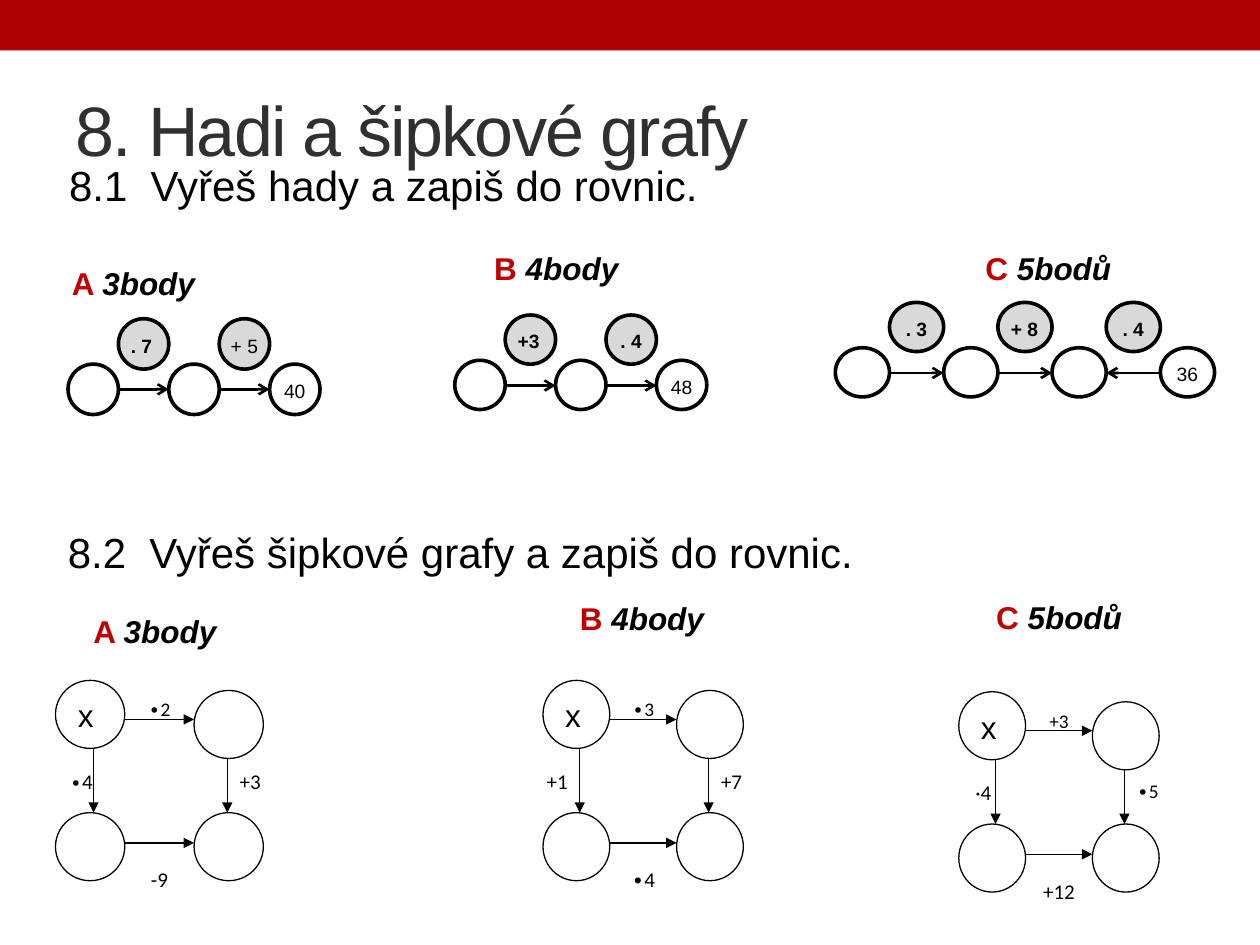
from dataclasses import dataclass

from lxml import etree
from pptx import Presentation
from pptx.dml.color import RGBColor
from pptx.enum.shapes import MSO_CONNECTOR, MSO_SHAPE
from pptx.enum.text import MSO_ANCHOR, PP_ALIGN
from pptx.oxml.ns import qn
from pptx.util import Inches, Pt

LEFT, CENTER = PP_ALIGN.LEFT, PP_ALIGN.CENTER
TOP, MIDDLE = MSO_ANCHOR.TOP, MSO_ANCHOR.MIDDLE
RECTANGLE, ELLIPSE, NODE = MSO_SHAPE.RECTANGLE, MSO_SHAPE.OVAL, MSO_SHAPE.FLOWCHART_CONNECTOR
STRAIGHT = MSO_CONNECTOR.STRAIGHT


@dataclass(frozen=True)
class Theme:
    """Colours, fonts, type sizes and line widths of the slide."""
    bar: str = "AD0101"
    title: str = "303030"
    accent: str = "C00000"
    ink: str = "000000"
    paper: str = "FFFFFF"
    operation: str = "D9D9D9"
    font: str = "Arial"
    label_font: str = "Calibri"
    title_size: int = 40
    task_size: int = 24
    heading_size: int = 18
    label_size: int = 12
    small_size: int = 11
    ring: float = 2.08
    snake_arrow: float = 1.5
    thin: float = 0.75


THEME = Theme()
SPACED = {"line_spacing": 1.15, "space_after": Pt(10)}


def apply_format(target, values):
    """Set each attribute of target from a dict of format values."""
    for name, value in values.items():
        setattr(target, name, value)


def write(shape, runs, size, align=LEFT, anchor=TOP, font=THEME.font, paragraph_format=None, margins=None):
    """Fill a shape with one paragraph of (text, format) runs."""
    frame = shape.text_frame
    apply_format(frame, {"word_wrap": True, "vertical_anchor": anchor, **(margins or {})})
    paragraph = frame.paragraphs[0]
    apply_format(paragraph, {"alignment": align, **(paragraph_format or {})})
    for text, values in runs:
        run = paragraph.add_run()
        run.text = text
        values = dict(values)
        run.font.color.rgb = RGBColor.from_string(values.pop("color", THEME.ink))
        apply_format(run.font, {"name": font, "size": Pt(size), **values})
    return paragraph


def add_figure(shapes, kind, box, fill=None, line=None):
    """Add a preset shape with a flat fill and an optional black outline."""
    shape = shapes.add_shape(kind, *map(Inches, box))
    shape.shadow.inherit = False
    if fill:
        shape.fill.solid()
        shape.fill.fore_color.rgb = RGBColor.from_string(fill)
    else:
        shape.fill.background()
    if line:
        shape.line.color.rgb = RGBColor.from_string(THEME.ink)
        shape.line.width = Pt(line)
    else:
        shape.line.fill.background()
    return shape


def add_arrow(shapes, start, end, width, head):
    """Add a straight black arrow between two points."""
    arrow = shapes.add_connector(STRAIGHT, *map(Inches, (*start, *end)))
    arrow.line.color.rgb = RGBColor.from_string(THEME.ink)
    arrow.line.width = Pt(width)
    etree.SubElement(arrow.line._ln, qn("a:tailEnd"), type=head)
    etree.SubElement(arrow._element.spPr, qn("a:effectLst"))


def add_title(slide, text):
    """Place and format the title."""
    title = slide.shapes.title
    apply_format(title, dict(zip(("left", "top", "width", "height"), map(Inches, (0.5, 0.58, 9, 0.88)))))
    paragraph = write(title, [(text, {"color": THEME.title})], THEME.title_size, anchor=MIDDLE)
    paragraph.runs[0].font._element.set("spc", "-100")


def add_task(slide, left, top, text):
    """Add the line that states a task."""
    box = slide.shapes.add_textbox(*map(Inches, (left, top, 9, 0.64)))
    write(box, [(text, {})], THEME.task_size, paragraph_format={"space_before": Pt(0.2 * THEME.task_size)})


def add_heading(slide, left, top, width, letter, points):
    """Add an exercise letter with its points."""
    box = slide.shapes.add_textbox(*map(Inches, (left, top, width, 0.55)))
    runs = [(letter + " ", {"bold": True, "color": THEME.accent}), (points, {"bold": True, "italic": True})]
    write(box, runs, THEME.heading_size, CENTER, MIDDLE)


def add_snake(slide, left, top, column, height, operations, result, backward=()):
    """Add a chain of circles with operations above the gaps."""
    shapes = slide.shapes.add_group_shape().shapes
    last = len(operations)

    def add_circle(place, y, fill=None, text=None, bold=False, align=CENTER):
        """Add a circle in a column of the snake."""
        circle = add_figure(shapes, ELLIPSE, (left + place * column, y, column, height), fill, THEME.ring)
        if text:
            side = Inches(0.04 if align == LEFT else 0)
            margins = {"margin_left": side, "margin_right": side,
                       "margin_top": Inches(0.04), "margin_bottom": Inches(0.04)}
            write(circle, [(text, {"bold": bold})], THEME.small_size, align, MIDDLE,
                  paragraph_format=SPACED, margins=margins)

    for index in range(last + 1):
        add_circle(2 * index, top, text=result if index == last else None)
    for index, (text, bold, align) in enumerate(operations):
        add_circle(2 * index + 1, top - 0.36, THEME.operation, text, bold, align)
        ends = [(left + place * column, top + 0.2) for place in (2 * index + 1, 2 * index + 2)]
        if index in backward:
            ends.reverse()
        add_arrow(shapes, *ends, THEME.snake_arrow, "arrow")


def add_graph(slide, left, top, column, labels, left_align=CENTER):
    """Add a square of four circles joined by labelled arrows."""
    shapes = slide.shapes.add_group_shape().shapes
    height, lower = 0.54, top + 1.05
    second, third = left + column, left + 2 * column
    down_left, down_right = left + 0.55 * column, left + 2.48 * column
    places = ((second, top + 0.06, CENTER), (left - 0.07, top + 0.62, left_align),
              (second, top + 1.4, CENTER), (down_right, top + 0.62, LEFT))
    for index, ((x, y, align), runs) in enumerate(zip(places, labels)):
        box = (x, y, column, 0.32)
        if index == 0:
            label = add_figure(shapes, RECTANGLE, box, THEME.paper)
        else:
            label = shapes.add_textbox(*map(Inches, box))
        sized = [(text, {"size": Pt(size)}) for text, size in runs]
        write(label, sized, THEME.label_size, align, font=THEME.label_font, paragraph_format=SPACED)
    nodes = [add_figure(shapes, NODE, (x, y, column, height), THEME.paper, THEME.thin)
             for x, y in ((left, top), (third, top + 0.08), (third, lower), (left, lower))]
    write(nodes[0], [("x", {})], THEME.heading_size)
    for start, end in (((second, top + 0.31), (third, top + 0.31)),
                       ((second, top + 1.29), (third, top + 1.29)),
                       ((down_left, top + height), (down_left, lower)),
                       ((down_right, top + 0.62), (down_right, lower))):
        add_arrow(shapes, start, end, THEME.thin, "triangle")


def main():
    """Build the slide and save it."""
    presentation = Presentation()
    presentation.slide_width, presentation.slide_height = Inches(10), Inches(7.5)
    slide = presentation.slides.add_slide(presentation.slide_layouts[5])
    add_figure(slide.shapes, RECTANGLE, (0, 0, 10, 0.4), THEME.bar)
    add_title(slide, "8. Hadi a šipkové grafy")
    add_task(slide, 0.45, 1.22, "8.1  Vyřeš hady a zapiš do rovnic.")
    add_task(slide, 0.44, 4.13, "8.2  Vyřeš šipkové grafy a zapiš do rovnic.")

    for heading in ((0.41, 1.97, 1.3, "A", "3body"), (3.63, 1.85, 1.57, "B", "4body"),
                    (7.61, 1.85, 1.42, "C", "5bodů"), (0.58, 4.73, 1.3, "A", "3body"),
                    (4.31, 4.63, 1.57, "B", "4body"), (7.78, 4.62, 1.25, "C", "5bodů")):
        add_heading(slide, *heading)

    add_snake(slide, 0.54, 2.89, 0.4, 0.4, [(". 7", True, LEFT), ("+ 5", False, CENTER)], "40")
    add_snake(slide, 3.61, 2.86, 0.4, 0.39, [("+3", True, LEFT), (". 4", True, CENTER)], "48")
    add_snake(slide, 6.63, 2.76, 0.43, 0.39,
              [(". 3", True, CENTER), ("+ 8", True, LEFT), (". 4", True, CENTER)], "36", backward=(2,))

    small, normal = THEME.small_size, THEME.label_size
    add_graph(slide, 0.44, 5.4, 0.55,
              ([("∙2", small)], [("∙", small), ("4", normal)], [("-9", normal)], [("+3", normal)]))
    add_graph(slide, 4.31, 5.4, 0.53,
              ([("∙3", small)], [("+1", normal)], [("∙4", normal)], [("+7", normal)]), LEFT)
    add_graph(slide, 7.61, 5.49, 0.53,
              ([("+3", small)], [("·4", normal)], [("+12", normal)], [("∙5", small)]))
    presentation.save("out.pptx")


if __name__ == "__main__":
    main()
